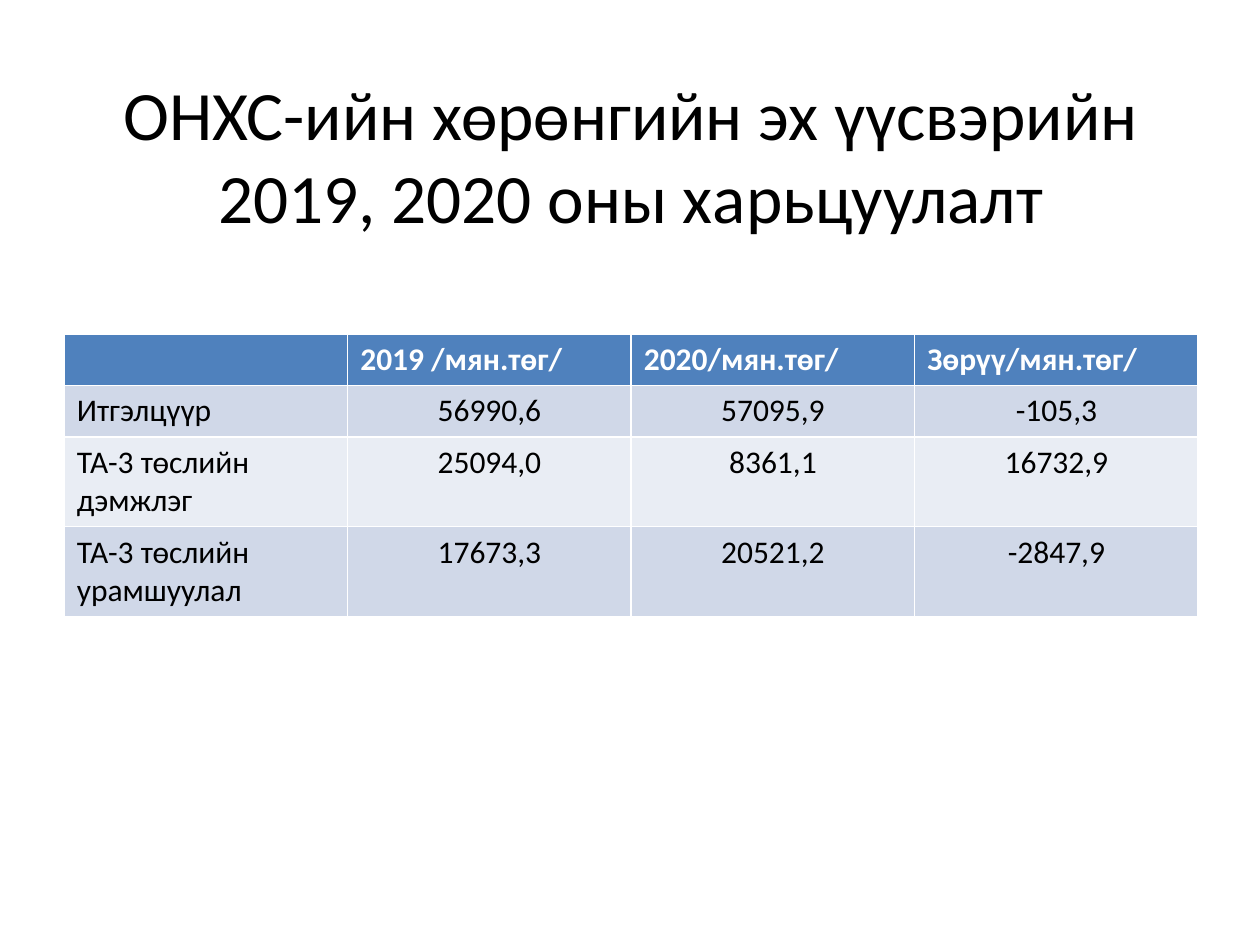
from pptx import Presentation, util as u
from pptx.dml.color import RGBColor
from pptx.enum import text as t

BLACK = RGBColor(0x00, 0x00, 0x00)
WHITE = RGBColor(0xFF, 0xFF, 0xFF)
BLUE = RGBColor(0x4F, 0x81, 0xBD)
BANDS = (RGBColor(0xD0, 0xD8, 0xE8), RGBColor(0xE9, 0xED, 0xF4))
FONT = "Calibri"

TITLE = "ОНХС-ийн хөрөнгийн эх үүсвэрийн 2019, 2020 оны харьцуулалт"
ROWS = (
    ("", "2019 /мян.төг/", "2020/мян.төг/", "Зөрүү/мян.төг/"),
    ("Итгэлцүүр", "56990,6", "57095,9", "-105,3"),
    ("ТА-3 төслийн дэмжлэг", "25094,0", "8361,1", "16732,9"),
    ("ТА-3 төслийн урамшуулал", "17673,3", "20521,2", "-2847,9"),
)


def write(frame, words, size, color, align, bold=False):
    para = frame.paragraphs[0]
    para.alignment = align
    if not words:
        para.font.size = u.Pt(size)
        return
    run = para.add_run()
    run.text = words
    font = run.font
    font.name, font.size, font.bold = FONT, u.Pt(size), bold
    font.color.rgb = color


def add_title(slide, box):
    title = slide.shapes.title
    title.left, title.top, title.width, title.height = box
    frame = title.text_frame
    frame.word_wrap = True
    frame.auto_size = t.MSO_AUTO_SIZE.NONE
    frame.vertical_anchor = t.MSO_ANCHOR.MIDDLE
    write(frame, TITLE, 39.6, BLACK, t.PP_ALIGN.CENTER)


def add_grid(slide, box):
    # The default table style supplies the white rules
    grid = slide.shapes.add_table(len(ROWS), len(ROWS[0]), *box).table
    for r, row in enumerate(ROWS):
        head = r == 0
        for c, words in enumerate(row):
            cell = grid.cell(r, c)
            cell.fill.solid()
            cell.fill.fore_color.rgb = BLUE if head else BANDS[(r - 1) % 2]
            align = t.PP_ALIGN.LEFT if head or c == 0 else t.PP_ALIGN.CENTER
            write(cell.text_frame, words, 18, WHITE if head else BLACK,
                  align, head)


def main():
    deck = Presentation()
    deck.slide_width, deck.slide_height = u.Inches(10), u.Inches(7.5)
    slide = deck.slides.add_slide(deck.slide_layouts[5])

    # Title and table share one column
    left, width = u.Inches(0.51), u.Inches(9)
    add_title(slide, (left, u.Inches(0.6), width, u.Inches(1.25)))
    add_grid(slide, (left, u.Inches(2.65), width, u.Inches(0.41) * len(ROWS)))
    deck.save("out.pptx")


if __name__ == "__main__":
    main()
